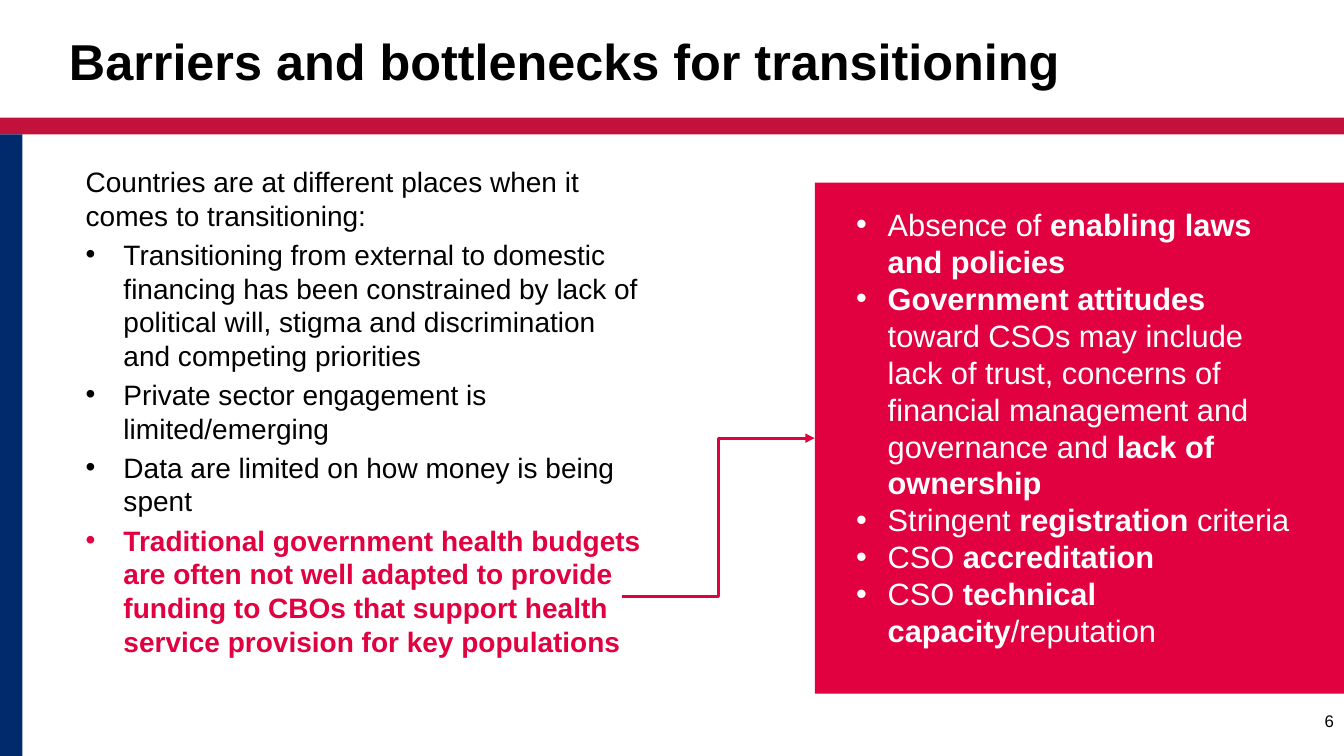
"""Build a slide on the barriers and bottlenecks for transitioning."""
from dataclasses import dataclass

from lxml import etree
from pptx import Presentation
from pptx.dml.color import RGBColor
from pptx.enum.shapes import MSO_CONNECTOR, MSO_SHAPE
from pptx.enum.text import MSO_ANCHOR, MSO_AUTO_SIZE, PP_ALIGN
from pptx.oxml.ns import qn
from pptx.util import Pt

RECTANGLE = MSO_SHAPE.RECTANGLE
ELBOW = MSO_CONNECTOR.ELBOW
TOP, MIDDLE = MSO_ANCHOR.TOP, MSO_ANCHOR.MIDDLE
LEFT, RIGHT = PP_ALIGN.LEFT, PP_ALIGN.RIGHT
NO_AUTOFIT = MSO_AUTO_SIZE.NONE
LEFT_SITE = 1


@dataclass(frozen=True)
class Theme:
    font: str = "Arial"
    ink: str = "000000"
    white: str = "FFFFFF"
    accent: str = "E10040"
    band: str = "C2113A"
    side: str = "002A6C"
    title: int = 36
    panel: int = 22
    body: int = 20
    number: int = 12


class SlideBuilder:
    def __init__(self, slide, theme):
        self.slide = slide
        self.theme = theme

    def place(self, holder, left, top, width, height):
        holder.left, holder.top = Pt(left), Pt(top)
        holder.width, holder.height = Pt(width), Pt(height)
        return holder

    def fill_text(self, frame, paragraphs, size, color, align=LEFT, anchor=TOP, gap=0):
        frame.word_wrap = True
        frame.auto_size = NO_AUTOFIT
        frame.vertical_anchor = anchor
        for index, (indent, hanging, runs) in enumerate(paragraphs):
            paragraph = frame.add_paragraph() if index else frame.paragraphs[0]
            paragraph.alignment = align
            paragraph.space_before = Pt(gap if index else 0)
            self.bullet(paragraph, indent, hanging)
            for text, bold, *own_color in runs:
                run = paragraph.add_run()
                run.text = text
                run.font.name = self.theme.font
                run.font.size = Pt(size)
                run.font.bold = bold
                run.font.color.rgb = RGBColor.from_string(own_color[0] if own_color else color)

    def bullet(self, paragraph, indent, hanging):
        properties = paragraph._p.get_or_add_pPr()
        properties.set("marL", str(Pt(indent)))
        properties.set("indent", str(Pt(-hanging)))
        if hanging:
            etree.SubElement(properties, qn("a:buFont")).set("typeface", self.theme.font)
            etree.SubElement(properties, qn("a:buChar")).set("char", "•")
        else:
            etree.SubElement(properties, qn("a:buNone"))

    def title(self, text, box):
        holder = self.place(self.slide.shapes.title, *box)
        self.fill_text(holder.text_frame, [(0, 0, [(text, True)])],
                       self.theme.title, self.theme.ink)

    def body(self, paragraphs, box):
        holder = self.place(self.slide.placeholders[1], *box)
        self.fill_text(holder.text_frame, paragraphs, self.theme.body, self.theme.ink, gap=4)

    def block(self, color, box):
        block = self.slide.shapes.add_shape(RECTANGLE, *map(Pt, box))
        block.shadow.inherit = False
        block.fill.solid()
        block.fill.fore_color.rgb = RGBColor.from_string(color)
        block.line.fill.background()
        return block

    def panel(self, paragraphs, box):
        panel = self.block(self.theme.accent, box)
        frame = panel.text_frame
        frame.margin_left, frame.margin_right = Pt(7.2), Pt(28.8)
        frame.margin_top, frame.margin_bottom = Pt(14.4), Pt(30)
        self.fill_text(frame, paragraphs, self.theme.panel, self.theme.white, anchor=MIDDLE)
        return panel

    def page_number(self, text, box):
        number = self.slide.shapes.add_textbox(*map(Pt, box))
        self.fill_text(number.text_frame, [(0, 0, [(text, False)])],
                       self.theme.number, self.theme.ink, align=RIGHT)

    def arrow(self, start, target):
        end = (target.left, target.top + target.height // 2)
        arrow = self.slide.shapes.add_connector(ELBOW, *map(Pt, start), *end)
        arrow.end_connect(target, LEFT_SITE)
        arrow.line.color.rgb = RGBColor.from_string(self.theme.accent)
        arrow.line.width = Pt(2.25)
        etree.SubElement(arrow.line._get_or_add_ln(), qn("a:tailEnd")).set("type", "triangle")
        etree.SubElement(arrow._element.spPr, qn("a:effectLst"))


def main():
    deck = Presentation()
    deck.slide_width, deck.slide_height = Pt(960), Pt(540)
    theme = Theme()
    builder = SlideBuilder(deck.slides.add_slide(deck.slide_layouts[1]), theme)

    builder.block(theme.band, (0, 84, 960, 12))
    builder.block(theme.side, (0, 96, 16, 444))
    builder.title("Barriers and bottlenecks for transitioning", (42, 18, 894, 48))

    situation = [
        ("Transitioning from external to domestic financing has been constrained by lack of "
         "political will, stigma and discrimination and competing priorities", False),
        ("Private sector engagement is limited/emerging", False),
        ("Data are limited on how money is being spent", False),
        ("Traditional government health budgets are often not well adapted to provide funding "
         "to CBOs that support health service provision for key populations", True, theme.accent),
    ]
    introduction = ("Countries are at different places when it comes to transitioning:", False)
    builder.body([(0, 0, [introduction])] + [(27, 27, [point]) for point in situation],
                 (54, 114, 414, 384))

    barriers = [
        [("Absence of ", False), ("enabling laws and policies", True)],
        [("Government attitudes ", True),
         ("toward CSOs may include lack of trust, concerns of financial management "
          "and governance and ", False),
         ("lack of ownership", True)],
        [("Stringent ", False), ("registration", True), (" criteria", False)],
        [("CSO ", False), ("accreditation", True)],
        [("CSO ", False), ("technical capacity", True), ("/reputation", False)],
    ]
    panel = builder.panel([(45, 22.5, runs) for runs in barriers], (582, 130.5, 378, 365))
    builder.arrow((444, 426), panel)
    builder.page_number("6", (760, 504, 200, 36))
    deck.save("out.pptx")


if __name__ == "__main__":
    main()
